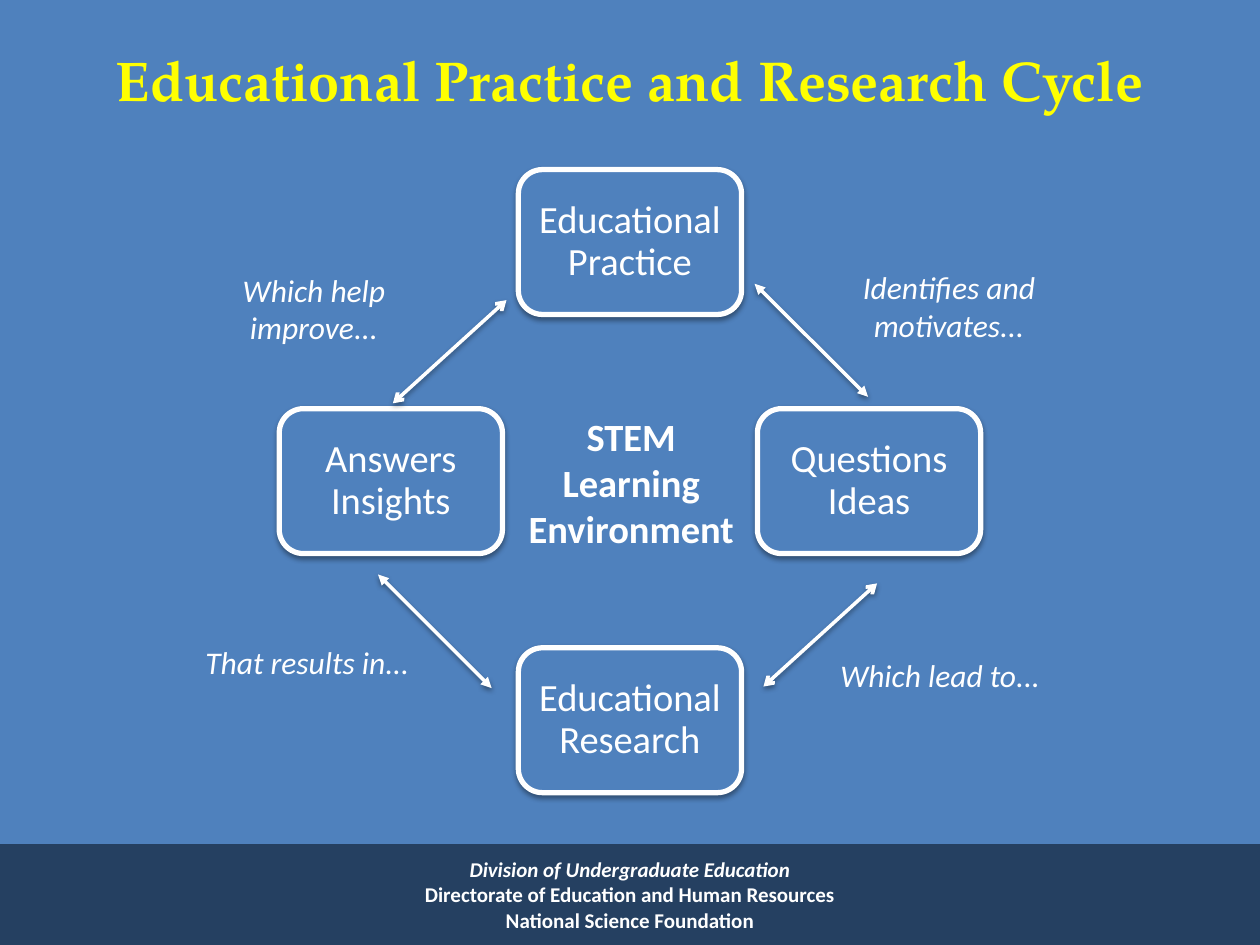
from lxml import etree
from pptx import Presentation
from pptx.dml.color import RGBColor as Rgb
from pptx.enum.shapes import MSO_CONNECTOR as Link, MSO_SHAPE as Form
from pptx.enum.text import MSO_ANCHOR as Anchor, PP_ALIGN as Align
from pptx.oxml import parse_xml
from pptx.oxml.ns import nsdecls, qn
from pptx.util import Cm, Pt

HUES = {"blue": "4F81BD", "navy": "254061", "white": "FFFFFF", "yellow": "FFFF00"}
HUES = {name: Rgb.from_string(code) for name, code in HUES.items()}


def write(shape, *paras, size=18, font="Calibri", hue="white", bold=False,
          slant=False, align=Align.CENTER, anchor=Anchor.TOP, space=None):
    """Fill a shape with paragraphs of one format."""
    frame = shape.text_frame
    frame.word_wrap = True
    frame.vertical_anchor = anchor
    for i, text in enumerate(paras):
        para = frame.add_paragraph() if i else frame.paragraphs[0]
        para.text = text
        para.alignment = align
        para.line_spacing = space
        for run in para.runs:
            run.font.size, run.font.name = Pt(size), font
            run.font.bold, run.font.italic = bold, slant
            run.font.color.rgb = HUES[hue]
    return frame


def shade(shape):
    """Add the soft shadow below; call once the line is set."""
    shape._element.spPr.append(parse_xml(
        f'<a:effectLst {nsdecls("a")}><a:outerShdw blurRad="{Pt(3.1)}" dist="{Pt(1.6)}" '
        'dir="5400000" rotWithShape="0"><a:srgbClr val="000000"><a:alpha val="38000"/>'
        '</a:srgbClr></a:outerShdw></a:effectLst>'))


deck = Presentation()
deck.slide_width, deck.slide_height = Cm(25.4), Cm(19.05)
slide = deck.slides.add_slide(deck.slide_layouts[6])
slide.background.fill.solid()
slide.background.fill.fore_color.rgb = HUES["blue"]
shapes = slide.shapes

# Footer band
band = shapes.add_shape(Form.RECTANGLE, 0, Cm(17.02), Cm(25.4), Cm(2.03))
band.shadow.inherit = False
band.fill.solid()
band.fill.fore_color.rgb = HUES["navy"]
band.line.fill.background()
foot = write(band, "Division of Undergraduate Education\vDirectorate of Education and Human Resources",
             "National Science Foundation", size=12, bold=True, anchor=Anchor.MIDDLE)
foot.paragraphs[0].runs[0].font.italic = True

# Title
title = shapes.add_textbox(Cm(1.27), 0, Cm(22.86), Cm(3.18))
write(title, "Educational Practice and Research Cycle", size=32, bold=True,
      font="TeX Gyre Pagella", hue="yellow", anchor=Anchor.MIDDLE)

# Four boxes on a ring, clockwise from the top
MID_X, MID_Y, REACH = 12.7, 9.7, 4.82
WIDE, HIGH = 4.5, 2.92
for text, dx, dy in [("Educational Practice", 0, -1), ("Questions Ideas", 1, 0),
                     ("Educational Research", 0, 1), ("Answers Insights", -1, 0)]:
    box = shapes.add_shape(Form.ROUNDED_RECTANGLE, Cm(MID_X + dx * REACH - WIDE / 2),
                           Cm(MID_Y + dy * REACH - HIGH / 2), Cm(WIDE), Cm(HIGH))
    box.fill.solid()
    box.fill.fore_color.rgb = HUES["blue"]
    box.line.color.rgb = HUES["white"]
    box.line.width = Pt(3)
    shade(box)
    frame = write(box, text, size=22, anchor=Anchor.MIDDLE, space=0.9)
    frame.margin_left = frame.margin_right = Cm(0.23)
    frame.margin_top = frame.margin_bottom = Cm(0.23)

# Double arrows between the boxes
for x1, y1, x2, y2, head in [(7.62, 11.58, 9.91, 13.87, "triangle"),
                             (17.68, 11.76, 15.39, 13.84, "arrow"),
                             (10.21, 6.05, 7.92, 8.13, "arrow"),
                             (15.21, 5.72, 17.5, 8, "triangle")]:
    link = shapes.add_connector(Link.STRAIGHT, Cm(x1), Cm(y1), Cm(x2), Cm(y2))
    link.line.color.rgb = HUES["white"]
    link.line.width = Pt(2)
    for end in ("a:headEnd", "a:tailEnd"):
        etree.SubElement(link.line._ln, qn(end), type=head)
    shade(link)

# Labels beside the arrows
for text, x, y, high, align in [("Which help improve...", 3.89, 5.33, 1.8, Align.CENTER),
                                ("That results in...", 3.89, 12.83, 1.02, Align.LEFT),
                                ("Which lead to...", 16.69, 13.11, 1.02, Align.LEFT),
                                ("Identifies and motivates...", 16.69, 5.28, 1.8, Align.CENTER)]:
    label = shapes.add_textbox(Cm(x), Cm(y), Cm(4.88), Cm(high))
    write(label, text, slant=True, align=align)

core = shapes.add_textbox(Cm(10.21), Cm(8.2), Cm(5.03), Cm(3.07))
write(core, "STEM Learning Environment", size=22, bold=True)

deck.save("out.pptx")
